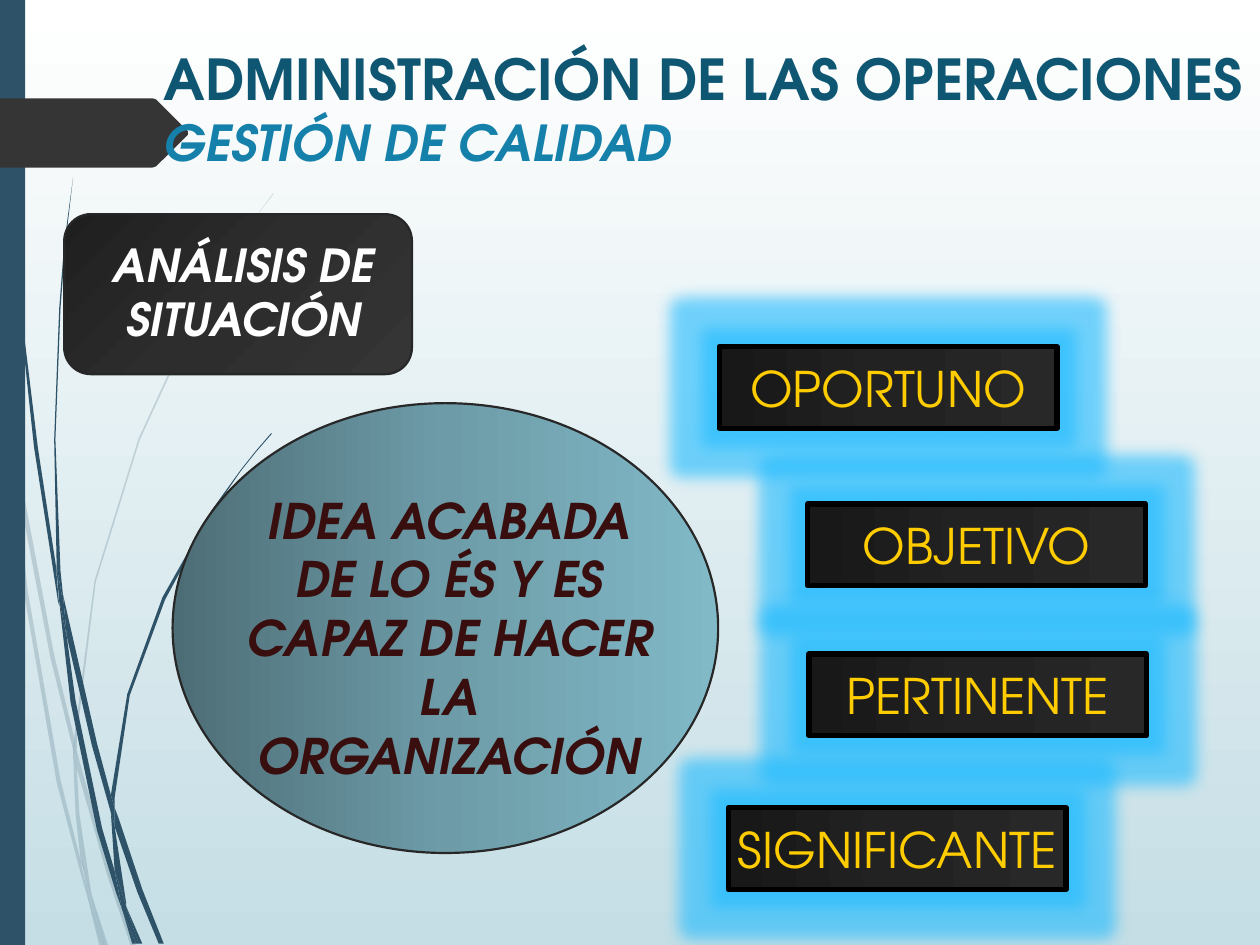
from copy import deepcopy

from lxml import etree
from pptx import Presentation
from pptx.dml.color import RGBColor
from pptx.enum.shapes import MSO_SHAPE
from pptx.enum.text import MSO_ANCHOR, MSO_AUTO_SIZE, PP_ALIGN
from pptx.oxml.ns import qn
from pptx.util import Pt

RECT, ROUND, OVAL = MSO_SHAPE.RECTANGLE, MSO_SHAPE.ROUNDED_RECTANGLE, MSO_SHAPE.OVAL
CENTER, TOP, MIDDLE = PP_ALIGN.CENTER, MSO_ANCHOR.TOP, MSO_ANCHOR.MIDDLE
NO_FIT = MSO_AUTO_SIZE.NONE
PX = 9144  # 100 px to the inch

THEME = {
    "font": "TeX Gyre Adventor",
    "sky": ("FFFFFF", "C5DEE5"),
    "stem": "2E5369", "tag": "353535", "edge": "272727",
    "oval": ("4D6D76", "6D9CA8", "81B9C7"),
    "card": ("1F1F1F", "2D2D2D", "353535"),
    "box": ("181818", "222222", "282828"), "frame": "000000",
    "glow": "1FBBFF", "glow_pt": 18, "glow_alpha": 60, "pale": 20,
    "title": ("0E5672", 32.2), "sub": ("1581AA", 28.3),
    "head": ("FFFFFF", 26), "idea": ("380F0E", 28), "trait": ("FFCC00", 28),
}

TITLE = ("ADMINISTRACIÓN DE LAS OPERACIONES", "GESTIÓN DE CALIDAD")
TITLE_AT = (120, 30, 892, 140)
HEAD = ("ANÁLISIS DE SITUACIÓN", (59, 183, 269, 98))
IDEA = ("IDEA ACABADA DE LO ÉS Y ES CAPAZ DE HACER LA ORGANIZACIÓN",
        (182, 384, 349, 246))
OVAL_AT, CARD_AT = (137, 320, 433, 357), (51, 170, 276, 127)
BAR_AT = (0, 0, 20, 750)
TRAITS = [
    ("OPORTUNO", 571, 275),
    ("OBJETIVO", 641, 400),
    ("PERTINENTE", 642, 519),
    ("SIGNIFICANTE", 578, 641),
]
TRAIT_SIZE = (268, 65)
TAG = (0, 78, 121, 78, 124, 79, 149, 104, 149, 107, 124, 132, 121, 133, 0, 133)

# Outlines of the grass blades: x, y, x, y, ...
PALE = [
    (8, 350, 6, 322, 0, 282, 0, 299, 7, 344),
    (40, 522, 59, 599, 59, 586, 43, 520, 10, 345, 12, 376),
    (64, 607, 61, 596, 61, 610, 85, 694, 104, 751, 108, 751, 88, 692),
    (83, 751, 86, 751, 73, 711),
    (64, 683, 48, 619, 22, 469, 12, 376, 8, 350, 19, 470, 45, 621, 64, 693,
     70, 714, 69, 707),
    (58, 599, 60, 646, 64, 683, 67, 692, 73, 711, 72, 706, 63, 646, 61, 610,
     61, 608),
    (61, 584, 76, 462, 111, 349, 159, 245, 187, 198, 201, 175, 217, 154,
     217, 153, 201, 175, 186, 197, 158, 244, 110, 348, 75, 461, 59, 584,
     59, 586, 61, 596),
    (70, 714, 79, 751, 82, 751),
    (61, 608, 61, 610, 61, 596, 59, 586, 58, 599),
    (67, 692, 65, 683, 69, 707, 70, 714, 82, 751, 83, 751, 73, 711),
]
DARK = [
    (5, 110, 14, 233, 27, 355, 46, 477, 47, 481, 45, 457, 45, 453, 30, 355,
     15, 232, 6, 109, 4, 48, 3, 0, 2, 0, 3, 48),
    (73, 592, 88, 645, 88, 633, 88, 631, 77, 590, 50, 472, 53, 505),
    (94, 649, 91, 641, 91, 656, 109, 708, 126, 749, 130, 749, 113, 706),
    (91, 691, 81, 657, 60, 556, 53, 505, 47, 477, 56, 557, 77, 659, 92, 708,
     97, 722, 96, 717),
    (50, 472, 48, 453, 44, 349, 48, 245, 52, 193, 58, 141, 51, 193, 47, 245,
     43, 349, 45, 449, 49, 472),
    (110, 749, 113, 749, 100, 719),
    (47, 477, 53, 505, 50, 472, 49, 472, 45, 449, 45, 453),
    (91, 633, 103, 552, 131, 476, 169, 406, 191, 374, 203, 359, 216, 344,
     215, 344, 203, 358, 191, 373, 168, 405, 129, 474, 101, 551, 88, 631,
     91, 641),
    (97, 722, 105, 749, 108, 749),
    (88, 645, 91, 691, 96, 706, 100, 719, 100, 716, 91, 656, 90, 651),
    (88, 645, 90, 651, 91, 656, 91, 641, 88, 631, 88, 633),
    (96, 706, 91, 691, 96, 717, 97, 722, 108, 749, 110, 749, 100, 719),
]


def rgb(code):
    return RGBColor.from_string(code)


def alpha(color, part):
    etree.SubElement(color, qn("a:alpha"), val=str(part * 1000))


def place(shape, at):
    shape.left, shape.top, shape.width, shape.height = (n * PX for n in at)


def blend(fill, root, tints, angle=0):
    """Fill with evenly spaced gradient stops; root holds the fill's XML."""
    fill.gradient()
    fill.gradient_angle = angle
    stops = root.find(".//" + qn("a:gsLst"))
    for _ in tints[2:]:
        stops.insert(1, deepcopy(stops[0]))
    for i, (stop, tint) in enumerate(zip(fill.gradient_stops, tints)):
        stop.color.rgb = rgb(tint)
        stop.position = i / (len(tints) - 1)


def solid(shape, tint):
    shape.shadow.inherit = False
    shape.fill.solid()
    shape.fill.fore_color.rgb = rgb(tint)
    shape.line.fill.background()


def outline(shapes, flat, tint, part=100):
    """Draw a filled polygon from a flat row of coordinates."""
    dots = list(zip(flat[::2], flat[1::2]))
    pen = shapes.build_freeform(*dots[0], scale=PX)
    pen.add_line_segments(dots[1:], close=True)
    shape = pen.convert_to_shape()
    solid(shape, tint)
    if part < 100:
        alpha(shape._element.spPr.find(".//" + qn("a:srgbClr")), part)


def panel(shapes, kind, at, tints, edge, width, angle=0):
    shape = shapes.add_shape(kind, *(n * PX for n in at))
    shape.shadow.inherit = False
    blend(shape.fill, shape._element.spPr, tints, angle)
    shape.line.color.rgb = rgb(edge)
    shape.line.width = Pt(width)
    return shape


def glow(shape):
    effects = shape._element.spPr.find(qn("a:effectLst"))
    halo = etree.SubElement(effects, qn("a:glow"), rad=str(Pt(THEME["glow_pt"])))
    color = etree.SubElement(halo, qn("a:srgbClr"), val=THEME["glow"])
    alpha(color, THEME["glow_alpha"])


def style(font, look, bold=False, slant=False):
    tint, size = THEME[look]
    font.name, font.size = THEME["font"], Pt(size)
    font.bold, font.italic = bold, slant
    font.color.rgb = rgb(tint)


def write(shape, text, look, wrap=True, strong=True):
    frame = shape.text_frame
    frame.word_wrap = wrap
    frame.vertical_anchor = TOP if wrap else MIDDLE
    para = frame.paragraphs[0]
    para.text, para.alignment = text, CENTER
    style(para.font, look, strong, strong)


def head(title):
    place(title, TITLE_AT)
    frame = title.text_frame
    frame.auto_size, frame.word_wrap = NO_FIT, True
    frame.vertical_anchor = TOP
    para = frame.paragraphs[0]
    para.alignment, para.line_spacing = PP_ALIGN.LEFT, 1.0
    for i, look in enumerate(("title", "sub")):
        if i:
            para.add_line_break()
        run = para.add_run()
        run.text = TITLE[i]
        style(run.font, look, True, i == 1)


def main():
    deck = Presentation()
    deck.slide_width, deck.slide_height = 1000 * PX, 750 * PX
    slide = deck.slides.add_slide(deck.slide_layouts[5])
    shapes = slide.shapes
    blend(slide.background.fill, slide._element, THEME["sky"], 270)

    for blade in PALE:
        outline(shapes, blade, THEME["stem"], THEME["pale"])
    for blade in DARK:
        outline(shapes, blade, THEME["stem"])
    solid(shapes.add_shape(RECT, *(n * PX for n in BAR_AT)), THEME["stem"])
    outline(shapes, TAG, THEME["tag"])

    panel(shapes, OVAL, OVAL_AT, THEME["oval"], THEME["edge"], 1.25)
    for text, x, y in TRAITS:
        box = panel(shapes, RECT, (x, y, *TRAIT_SIZE), THEME["box"],
                    THEME["frame"], 3)
        glow(box)
        write(box, text, "trait", wrap=False, strong=False)
    panel(shapes, ROUND, CARD_AT, THEME["card"], THEME["edge"], 1.25, 315)
    for (text, at), look in ((HEAD, "head"), (IDEA, "idea")):
        write(shapes.add_textbox(*(n * PX for n in at)), text, look)

    head(shapes.title)
    shapes._spTree.append(shapes.title._element)  # bring to front
    deck.save("out.pptx")


if __name__ == "__main__":
    main()
